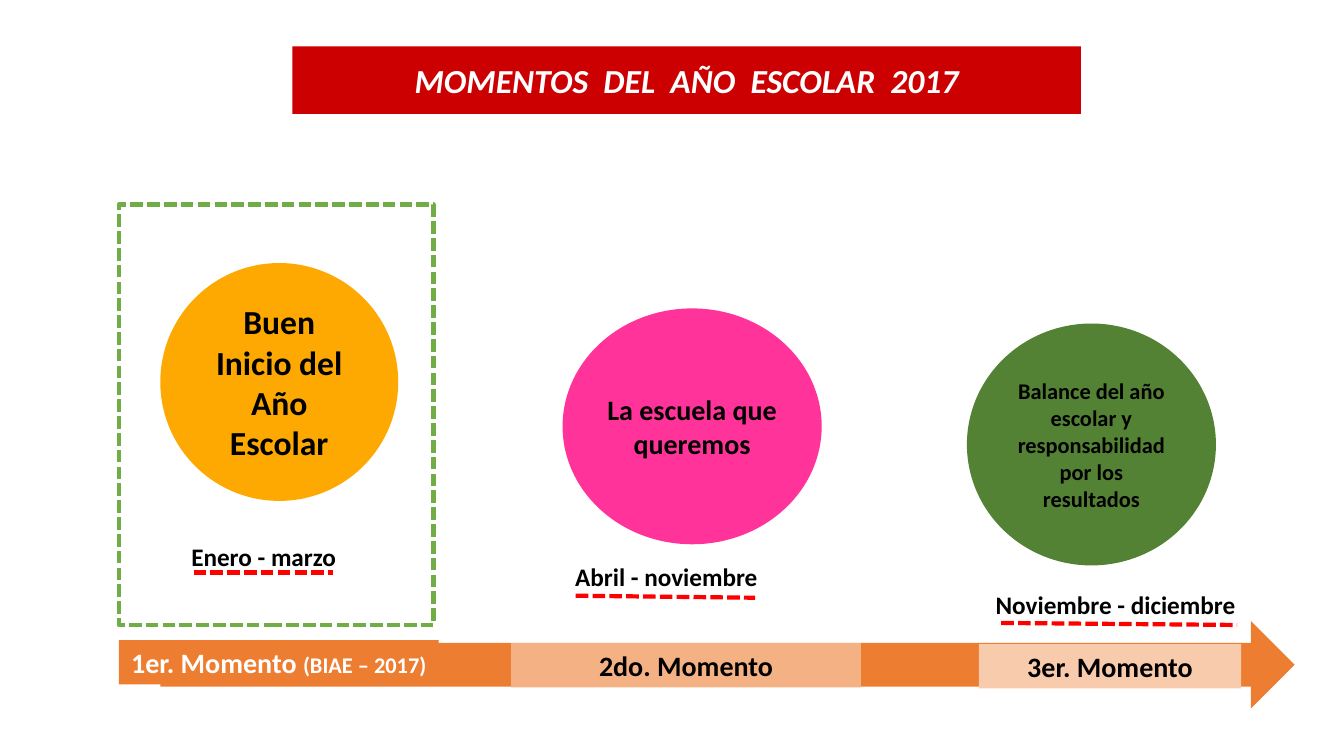
from lxml.etree import SubElement
from pptx import Presentation
from pptx.dml.color import RGBColor
from pptx.enum.dml import MSO_LINE
from pptx.enum.shapes import MSO_CONNECTOR, MSO_SHAPE
from pptx.enum.text import MSO_ANCHOR, PP_ALIGN
from pptx.oxml.ns import qn
from pptx.util import Inches, Pt

COLUMNS, ROWS = 133.3, 75
BLACK, WHITE, RED, ORANGE = "000000", "FFFFFF", "FF0000", "ED7D31"


def color(hex_code):
    return RGBColor.from_string(hex_code)


def write(shape, text, size=18, ink=BLACK, italic=False, space_after=0):
    paragraph = shape.text_frame.paragraphs[0]
    paragraph.alignment = PP_ALIGN.CENTER
    paragraph.space_after = Pt(space_after)
    run = paragraph.add_run()
    run.text = text
    run.font.name = "Calibri"
    run.font.size = Pt(size)
    run.font.bold = True
    run.font.italic = italic
    run.font.color.rgb = color(ink)


class SchoolYearSlide:
    def __init__(self, presentation):
        self.slide = presentation.slides.add_slide(presentation.slide_layouts[6])
        self.column = presentation.slide_width / COLUMNS
        self.row = presentation.slide_height / ROWS

    def place(self, left, top, width, height):
        return (round(left * self.column), round(top * self.row),
                round(width * self.column), round(height * self.row))

    def dash(self, line, ink):
        line.color.rgb = color(ink)
        line.width = Pt(3)
        line.dash_style = MSO_LINE.SQUARE_DOT

    def block(self, kind, area, fill, side_inset=0.1, anchor=MSO_ANCHOR.MIDDLE):
        shape = self.slide.shapes.add_shape(kind, *self.place(*area))
        shape.shadow.inherit = False
        shape.fill.solid()
        shape.fill.fore_color.rgb = color(fill)
        shape.line.fill.background()
        frame = shape.text_frame
        frame.word_wrap = True
        frame.vertical_anchor = anchor
        frame.margin_left = frame.margin_right = Inches(side_inset)
        return shape

    def dashed_frame(self, area, ink):
        frame = self.slide.shapes.add_shape(MSO_SHAPE.RECTANGLE, *self.place(*area))
        frame.shadow.inherit = False
        frame.fill.background()
        self.dash(frame.line, ink)

    def label(self, text, area):
        box = self.slide.shapes.add_textbox(*self.place(*area))
        box.text_frame.word_wrap = False
        write(box, text)

    def underline(self, start, end):
        ends = self.place(*start, *end)
        connector = self.slide.shapes.add_connector(MSO_CONNECTOR.STRAIGHT, *ends)
        self.dash(connector.line, RED)
        properties = connector._element.find(qn("p:spPr"))
        SubElement(properties, qn("a:effectLst"))


def main():
    presentation = Presentation()
    presentation.slide_width = Inches(13.33)
    presentation.slide_height = Inches(7.5)
    year = SchoolYearSlide(presentation)

    title = year.block(MSO_SHAPE.RECTANGLE, (29, 4.6, 78.2, 6.7), "CC0000")
    write(title, "MOMENTOS  DEL  AÑO  ESCOLAR  2017", size=24, ink=WHITE, italic=True)
    year.dashed_frame((11.8, 20.3, 31.2, 41.7), "70AD47")

    circles = [
        ("Buen Inicio del Año Escolar", (15.9, 26.1, 23.6, 23.6), "FDA901", 24, 0.1),
        ("La escuela que queremos", (55.8, 30.6, 25.7, 23.4), "FF3399", 20, 0.02),
        ("Balance del año escolar y responsabilidad por los resultados",
         (95.9, 32.1, 24.7, 24), "548235", 16, 0.1),
    ]
    for text, area, fill, size, inset in circles:
        write(year.block(MSO_SHAPE.OVAL, area, fill, inset), text, size=size)

    periods = [
        ("Enero - marzo", (17.9, 53.2, 16.5, 4), (19.2, 56.8), (33, 56.8)),
        ("Abril - noviembre", (55.8, 55.2, 20.6, 4), (57.1, 59.1), (74.9, 59.3)),
        ("Noviembre - diciembre", (97.1, 58, 27.1, 4), (99.3, 61.8), (122.7, 62)),
    ]
    for text, area, start, end in periods:
        year.label(text, area)
        year.underline(start, end)

    year.block(MSO_SHAPE.RIGHT_ARROW, (15.9, 61.6, 112.5, 8.7), ORANGE)
    moments = [
        ("1er. Momento ", "(BIAE – 2017)", (11.8, 63.5, 31.7, 4.4), ORANGE, WHITE),
        ("2do. Momento", "", (50.7, 63.8, 34.7, 4.4), "F4B183", BLACK),
        ("3er. Momento", "", (97.1, 63.9, 26, 4.4), "F8CBAD", BLACK),
    ]
    for name, detail, area, fill, ink in moments:
        moment = year.block(MSO_SHAPE.RECTANGLE, area, fill, anchor=MSO_ANCHOR.TOP)
        write(moment, name, size=20, ink=ink, space_after=6)
        if detail:
            write(moment, detail, size=16, ink=ink, space_after=6)

    presentation.save("out.pptx")


if __name__ == "__main__":
    main()
